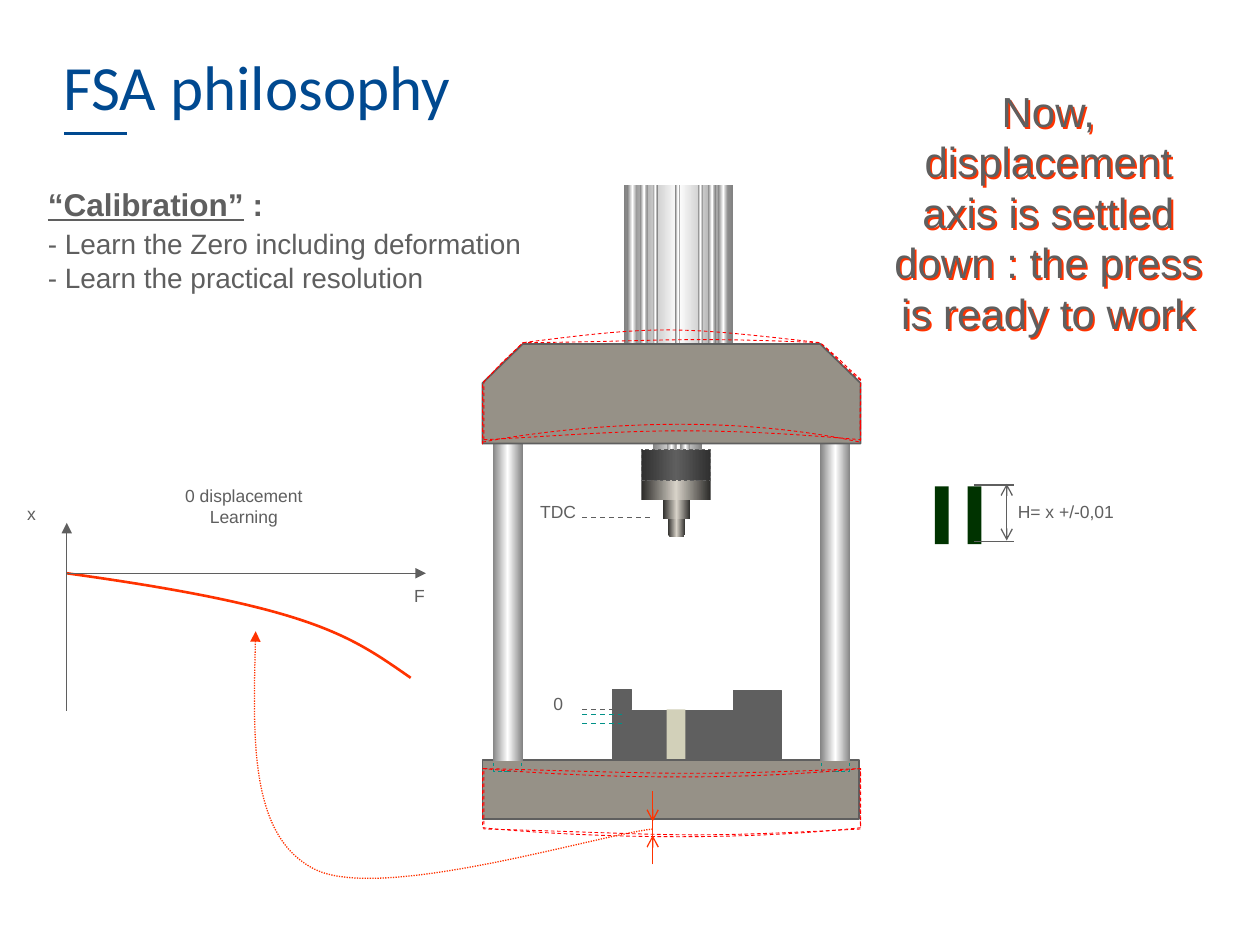
from lxml import etree
from pptx import Presentation
from pptx.dml.color import RGBColor
from pptx.enum.dml import MSO_LINE
from pptx.enum.shapes import MSO_CONNECTOR, MSO_SHAPE
from pptx.enum.text import MSO_ANCHOR, PP_ALIGN
from pptx.oxml.ns import qn
from pptx.util import Inches, Pt

HEX = {"blue": "004990", "grey": "5F5F5F", "cream": "D2D0B9", "stone": "969187",
       "red": "FF0000", "orange": "FF3300", "teal": "009187", "green": "003300"}
# Rim colour, middle colour, shade of the rim in 1/1000 percent
SHADE = {"steel": ("B6B6B6", "FFFFFF", 46275), "chuck": ("444444", "5F5F5F", 46275),
         "tool": ("2B2A28", "D7D2C8", None)}
DASH, DOT = MSO_LINE.DASH, MSO_LINE.ROUND_DOT
BOX, TIP = MSO_SHAPE.RECTANGLE, MSO_SHAPE.ROUNDED_RECTANGLE

prs = Presentation()
prs.slide_width, prs.slide_height = Inches(10), Inches(7.5)
slide = prs.slides.add_slide(prs.slide_layouts[5])
shapes = slide.shapes


def stroke(shape, color, width, dash=None, head=None, tail=None):
    """Format the outline of a shape or connector."""
    shape.line.color.rgb = RGBColor.from_string(HEX[color])
    shape.line.width = Pt(width)
    if dash:
        shape.line.dash_style = dash
    edge = shape.element.spPr.find(qn("a:ln"))
    for tag, kind in (("a:headEnd", head), ("a:tailEnd", tail)):
        if kind:
            etree.SubElement(edge, qn(tag), type=kind)


def write(frame, text, size=10, color="grey", font="Arial", bold=False,
          under=False, align=PP_ALIGN.CENTER, before=0, new=False):
    """Add a run to the last paragraph, or to a new one."""
    para = frame.add_paragraph() if new else frame.paragraphs[-1]
    para.alignment, para.space_before = align, Pt(before)
    run = para.add_run()
    run.text = text
    run.font.size, run.font.name = Pt(size), font
    run.font.bold, run.font.underline = bold, under
    run.font.color.rgb = RGBColor.from_string(HEX[color])


# Title
title = shapes.title
title.left, title.top = Inches(0.5), Inches(0.3)
title.width, title.height = Inches(9), Inches(0.68)
frame = title.text_frame
frame.margin_left = frame.margin_right = frame.margin_top = frame.margin_bottom = 0
frame.vertical_anchor = MSO_ANCHOR.BOTTOM
write(frame, "FSA philosophy", size=36, color="blue", font="Calibri", align=PP_ALIGN.LEFT)

# Press parts: kind, left, top, width, height, fill, edge
GREY, TEAL = ("grey", 0.75), ("teal", 0.5, DASH)
parts = [
    (BOX, 4.86, 5.64, 1.34, 0.39, "grey", GREY),
    (BOX, 5.29, 5.63, 0.15, 0.4, "cream", None),
    (BOX, 5.18, 1.76, 0.39, 1.81, "steel", None),
    (BOX, 5.29, 1.93, 0.08, 1.64, "steel", None),
    (BOX, 5.4, 1.93, 0.08, 1.64, "steel", None),
    (BOX, 5.09, 3.57, 0.55, 0.24, "chuck", None),
    (TIP, 5.3, 4.18, 0.14, 0.08, "tool", None),
    (BOX, 5.3, 4.06, 0.14, 0.16, "tool", None),
    (BOX, 5.26, 3.96, 0.22, 0.16, "tool", None),
    (BOX, 5.09, 3.81, 0.55, 0.16, "tool", None),
    (BOX, 5.09, 3.57, 0.55, 0.24, None, ("grey", 0.5, DASH)),
]
# Cylinder and its grooves
for x, w in ((4.95, 0.87), (5.54, 0.04), (5.62, 0.06), (5.7, 0.08),
             (5.18, 0.04), (5.08, 0.06), (4.98, 0.08), (5.36, 0.04)):
    parts.append((BOX, x, 1.47, w, 1.58, "steel", None))
# Base, die walls, pillars and gauge blocks
parts += [
    (BOX, 3.83, 6.03, 2.99, 0.47, "stone", ("grey", 1)),
    (BOX, 5.82, 5.48, 0.38, 0.16, "grey", GREY),
    (BOX, 4.86, 5.47, 0.15, 0.16, "grey", GREY),
]
for x in (3.91, 6.51):
    parts += [(BOX, x + 0.01, 5.88, 0.22, 0.24, None, TEAL),
              (BOX, x, 3.52, 0.24, 2.52, "steel", None)]
for x in (7.42, 7.68):
    parts.append((BOX, x, 3.86, 0.11, 0.46, "green", None))

for kind, x, y, w, h, fill, edge in parts:
    part = shapes.add_shape(kind, Inches(x), Inches(y), Inches(w), Inches(h))
    part.shadow.inherit = False
    if kind == TIP:
        part.adjustments[0] = 0.4
    if fill in SHADE:
        part.fill.gradient()
        part.fill.gradient_angle = 0
        stops = part.element.spPr.find(qn("a:gradFill")).find(qn("a:gsLst"))
        for stop in list(stops):
            stops.remove(stop)
        rim, mid, dark = SHADE[fill]
        for pos, tone in ((0, rim), (50000, mid), (100000, rim)):
            stop = etree.SubElement(stops, qn("a:gs"), pos=str(pos))
            tint = etree.SubElement(stop, qn("a:srgbClr"), val=tone)
            if dark and tone == rim:
                etree.SubElement(tint, qn("a:shade"), val=str(dark))
    elif fill:
        part.fill.solid()
        part.fill.fore_color.rgb = RGBColor.from_string(HEX[fill])
    else:
        part.fill.background()
    if edge:
        stroke(part, *edge)
    else:
        part.line.fill.background()

# Beam, bent frames, learning curve and link: fill, edge, start, segments
# (two numbers make a straight segment, six a Bezier curve)
RED = ("red", 0.5, DASH)
paths = [
    ("stone", ("grey", 1), (3.83, 3.52),
     [(3.83, 3.04), (4.15, 2.73), (6.51, 2.73), (6.83, 3.04), (6.83, 3.52), (3.83, 3.52)]),
    (None, RED, (3.83, 6.1),
     [(3.83, 6.1, 5.34, 6.25, 6.83, 6.1), (6.83, 6.34, 6.82, 6.1, 6.83, 6.57),
      (5.33, 6.73, 3.83, 6.57, 3.83, 6.57), (3.83, 6.18, 3.83, 6.1, 3.83, 6.1)]),
    (None, RED, (3.83, 3.51),
     [(3.83, 3.51, 5.35, 3.19, 6.83, 3.51), (6.83, 3.13, 6.82, 3.79, 6.83, 3.02),
      (6.53, 2.76, 6.82, 3.01, 6.51, 2.72), (5.37, 2.59, 5.24, 2.58, 4.15, 2.72),
      (3.9, 2.97, 4.1, 2.76, 3.83, 3.04), (3.83, 3.68, 3.83, 3.51, 3.83, 3.51)]),
    (None, ("orange", 1.5), (0.53, 4.55), [(2.48, 4.82, 2.77, 5.04, 3.26, 5.38)]),
    (None, ("orange", 0.75, DOT, None, "triangle"), (5.18, 6.58),
     [(4.73, 6.63, 3.03, 7.16, 2.5, 6.9), (1.98, 6.64, 2.01, 5.82, 2.03, 5.01)]),
    (None, RED, (3.84, 6.1),
     [(5.36, 6.14, 5.41, 6.16, 6.83, 6.1), (6.83, 6.34, 6.83, 6.1, 6.83, 6.58),
      (5.35, 6.66, 5.35, 6.62, 3.84, 6.58), (3.84, 6.1)]),
    (None, RED, (3.84, 3.49),
     [(4.84, 3.44, 5.36, 3.36, 6.83, 3.49), (6.83, 3.12, 6.83, 3.75, 6.83, 3.01),
      (6.54, 2.75, 6.83, 3, 6.51, 2.72), (5.38, 2.67, 5.25, 2.71, 4.15, 2.72),
      (3.9, 2.96, 4.11, 2.75, 3.84, 3.03), (3.84, 3.49)]),
]
for fill, edge, start, moves in paths:
    spots = [(Inches(m[i]), Inches(m[i + 1])) for m in moves for i in range(0, len(m), 2)]
    first = (Inches(start[0]), Inches(start[1]))
    pen = shapes.build_freeform(*first)
    pen.add_line_segments(spots, close=first == spots[-1])
    curve = pen.convert_to_shape()
    curve.shadow.inherit = False
    # Join each three points of a curve into one Bezier segment
    legs = list(curve.element.spPr.iter(qn("a:lnTo")))
    for move in moves:
        count = len(move) // 2
        group, legs = legs[:count], legs[count:]
        if count == 3:
            bend = etree.Element(qn("a:cubicBezTo"))
            group[0].addprevious(bend)
            for leg in group:
                bend.append(leg[0])
                leg.getparent().remove(leg)
    if fill:
        curve.fill.solid()
        curve.fill.fore_color.rgb = RGBColor.from_string(HEX[fill])
    else:
        curve.fill.background()
    stroke(curve, *edge)

# Straight lines: title rule, levels, height gauge, axes, gap arrows
lines = [
    (0.51, 1.06, 1.01, 1.06, ("blue", 2)),
    (4.62, 4.11, 5.17, 4.11, ("grey", 0.75, DASH)),
    (4.62, 5.63, 4.93, 5.63, ("grey", 0.75, DASH)),
    (4.62, 5.67, 4.94, 5.67, ("teal", 0.75, DASH)),
    (4.62, 5.74, 4.94, 5.74, ("teal", 0.75, DASH)),
    (7.99, 3.84, 7.99, 4.29, ("grey", 0.75, None, "arrow", "arrow")),
    (7.73, 4.3, 8.05, 4.3, GREY),
    (7.73, 3.85, 8.05, 3.85, GREY),
    (0.53, 4.55, 3.38, 4.55, ("grey", 0.75, None, None, "triangle")),
    (0.53, 5.64, 0.53, 4.15, ("grey", 0.75, None, None, "triangle")),
    (5.18, 6.28, 5.18, 6.52, ("orange", 0.75, None, None, "arrow")),
    (5.18, 6.86, 5.18, 6.63, ("orange", 0.75, None, None, "arrow")),
    (5.18, 6.43, 5.18, 6.66, ("orange", 0.75)),
]
for *ends, edge in lines:
    line = shapes.add_connector(MSO_CONNECTOR.STRAIGHT, *[Inches(v) for v in ends])
    stroke(line, *edge)
    etree.SubElement(line.element.spPr, qn("a:effectLst"))

# Calibration notes
notes = shapes.add_textbox(Inches(0.38), Inches(1.47), Inches(4.96), Inches(0.52))
frame = notes.text_frame
frame.word_wrap = True
frame.margin_left = frame.margin_right = frame.margin_top = frame.margin_bottom = 0
LEFT = PP_ALIGN.LEFT
write(frame, "“Calibration”", size=18, bold=True, under=True, align=LEFT)
write(frame, " :", size=18, bold=True, align=LEFT)
write(frame, "- Learn the Zero including deformation", size=16, align=LEFT, before=2, new=True)
write(frame, "- Learn the practical resolution", size=16, align=LEFT, new=True)

# Labels: left, top, width, height, size, lines
for x, y, w, h, size, texts in (
        (3.8, 3.93, 1.26, 0.27, 10, ["TDC"]),
        (3.8, 5.45, 1.26, 0.27, 10, ["0"]),
        (7.83, 3.93, 1.26, 0.27, 10, ["H= x +/-0,01"]),
        (3.06, 4.59, 0.54, 0.27, 10, ["F"]),
        (-0.02, 3.94, 0.54, 0.27, 10, ["x"]),
        (1.37, 3.8, 1.13, 0.43, 10, ["0 displacement", "Learning"]),
        (6.98, 0.63, 2.68, 2.12, 24,
         ["Now, displacement axis is settled down : the press is ready to work"])):
    label = shapes.add_textbox(Inches(x), Inches(y), Inches(w), Inches(h))
    label.text_frame.word_wrap = len(texts) == 1
    for i, text in enumerate(texts):
        write(label.text_frame, text, size=size, new=i > 0)

# Orange shadow behind the closing message, the last label
glow = etree.SubElement(label.element.spPr, qn("a:effectLst"))
cast = etree.SubElement(glow, qn("a:outerShdw"), dist=str(Pt(1.5)), dir="2700000")
etree.SubElement(cast, qn("a:srgbClr"), val=HEX["orange"])

prs.save("out.pptx")
